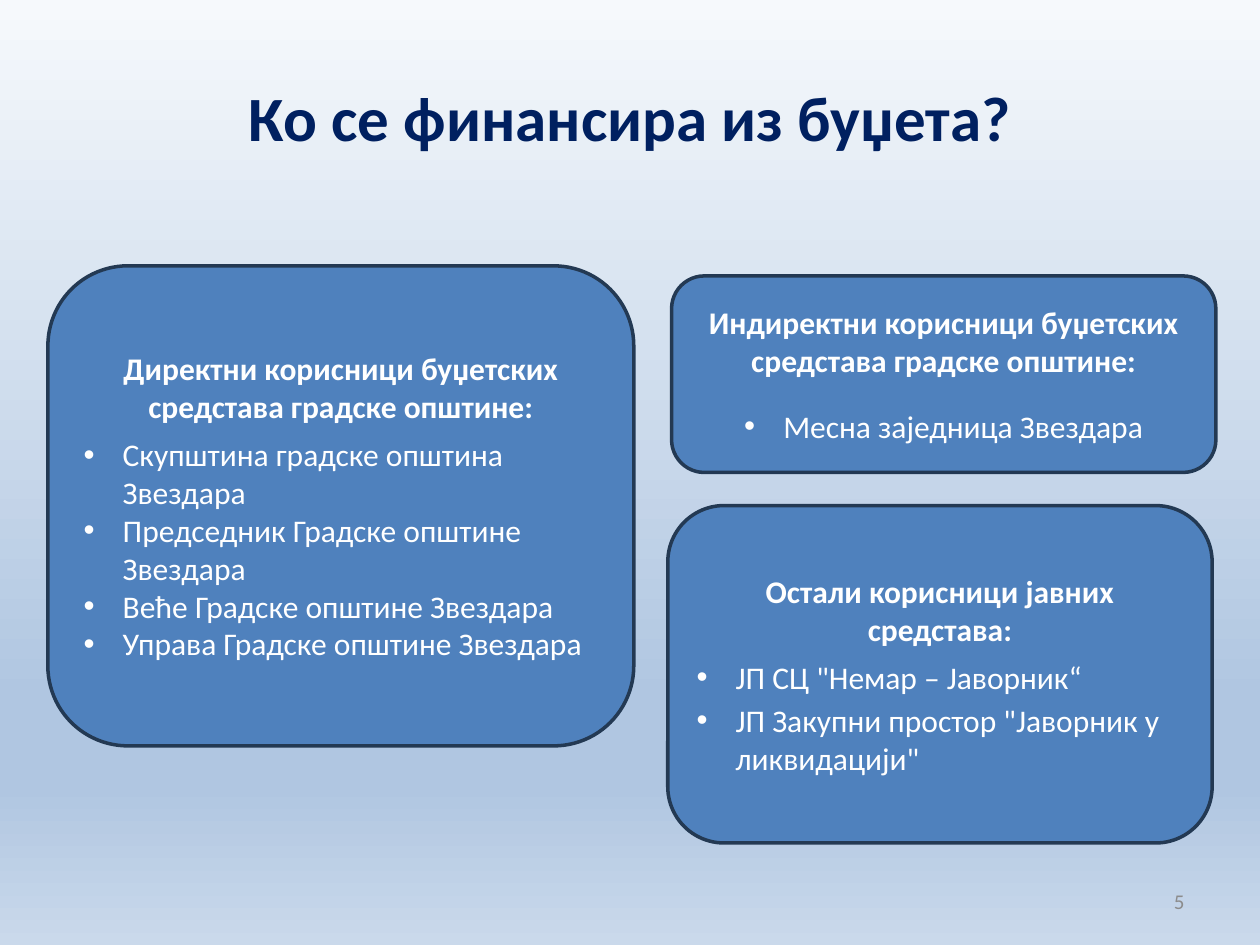
"""Build a slide on who is financed from the budget."""
from copy import deepcopy

from lxml.etree import SubElement
from pptx import Presentation
from pptx.dml.color import RGBColor
from pptx.enum.shapes import MSO_SHAPE
from pptx.enum.text import MSO_ANCHOR, PP_ALIGN
from pptx.oxml.ns import qn
from pptx.util import Inches, Pt

WIDE, HIGH = Inches(10), Inches(7.5)
NAVY, BLUE, EDGE, WHITE, GRAY = "002060", "4F81BD", "233953", "FFFFFF", "8C8C8C"
STOPS = [(0, "F6F9FC"), (74, "B0C6E1"), (83, "B0C6E1"), (100, "CAD9EB")]


def paint(color, code):
    color.rgb = RGBColor.from_string(code)


def area(*share):
    return [int(part * side / 100) for part, side in zip(share, (WIDE, HIGH) * 2)]


class Page:
    def __init__(self, deck, face="Calibri"):
        self.face = face
        self.slide = deck.slides.add_slide(deck.slide_layouts[5])

    def back(self, stops):
        fill = self.slide.background.fill
        fill.gradient()
        fill.gradient_angle = 270
        track = self.slide.element.xpath(".//a:gsLst")[0]
        for _ in stops[2:]:
            track.append(deepcopy(track[0]))
        for stop, (place, code) in zip(fill.gradient_stops, stops):
            stop.position = place / 100
            paint(stop.color, code)

    def style(self, para, size, code, bold=False, align=PP_ALIGN.LEFT):
        para.alignment = align
        font = para.font
        font.name, font.size, font.bold = self.face, Pt(size), bold
        paint(font.color, code)

    def title(self, text, *share):
        shape = self.slide.shapes.title
        shape.left, shape.top, shape.width, shape.height = area(*share)
        frame = shape.text_frame
        frame.text, frame.vertical_anchor = text, MSO_ANCHOR.MIDDLE
        self.style(frame.paragraphs[0], 36, NAVY, True, PP_ALIGN.CENTER)

    def number(self, text, *share):
        frame = self.slide.shapes.add_textbox(*area(*share)).text_frame
        frame.word_wrap, frame.vertical_anchor = True, MSO_ANCHOR.MIDDLE
        frame.text = text
        self.style(frame.paragraphs[0], 12, GRAY, align=PP_ALIGN.RIGHT)

    def bullet(self, para):
        props = para._p.get_or_add_pPr()
        props.set("marL", str(Inches(0.31)))
        props.set("indent", str(-Inches(0.31)))
        SubElement(props, qn("a:buFont")).set("typeface", "Arial")
        SubElement(props, qn("a:buChar")).set("char", "•")

    def card(self, share, head, items, align=PP_ALIGN.LEFT, lead=0, gap=0):
        shape = self.slide.shapes.add_shape(MSO_SHAPE.ROUNDED_RECTANGLE, *area(*share))
        shape.shadow.inherit = False
        shape.fill.solid()
        paint(shape.fill.fore_color, BLUE)
        paint(shape.line.color, EDGE)
        shape.line.width = Pt(2)
        frame = shape.text_frame
        frame.word_wrap, frame.vertical_anchor = True, MSO_ANCHOR.MIDDLE
        top = frame.paragraphs[0]
        top.text, top.space_after = head, Pt(6 + lead)
        self.style(top, 18, WHITE, True, PP_ALIGN.CENTER)
        for item in items:
            para = frame.add_paragraph()
            para.text, para.space_after = item, Pt(gap)
            self.bullet(para)
            self.style(para, 18, WHITE, align=align)


def main():
    deck = Presentation()
    deck.slide_width, deck.slide_height = WIDE, HIGH
    page = Page(deck)
    page.back(STOPS)
    page.title("Ко се финансира из буџета?", 5, 4, 90, 16.67)
    page.number("5", 71.7, 92.7, 23.3, 5.3)
    page.card((53.3, 29.2, 43.2, 20.8),
              "Индиректни корисници буџетских средстава градске општине:",
              ["Месна заједница Звездара"], align=PP_ALIGN.CENTER, lead=10)
    page.card((53, 53.5, 43.2, 35.7), "Остали корисници јавних средстава:",
              ['ЈП СЦ "Немар – Јаворник“',
               'ЈП Закупни простор "Јаворник у ликвидацији"'], gap=3)
    page.card((3.8, 28.13, 46.5, 50.8),
              "Директни корисници буџетских средстава градске општине:",
              ["Скупштина градске општина Звездара",
               "Председник Градске општине Звездара",
               "Веће Градске општине Звездара",
               "Управа Градске општине Звездара"])
    deck.save("out.pptx")


if __name__ == "__main__":
    main()
